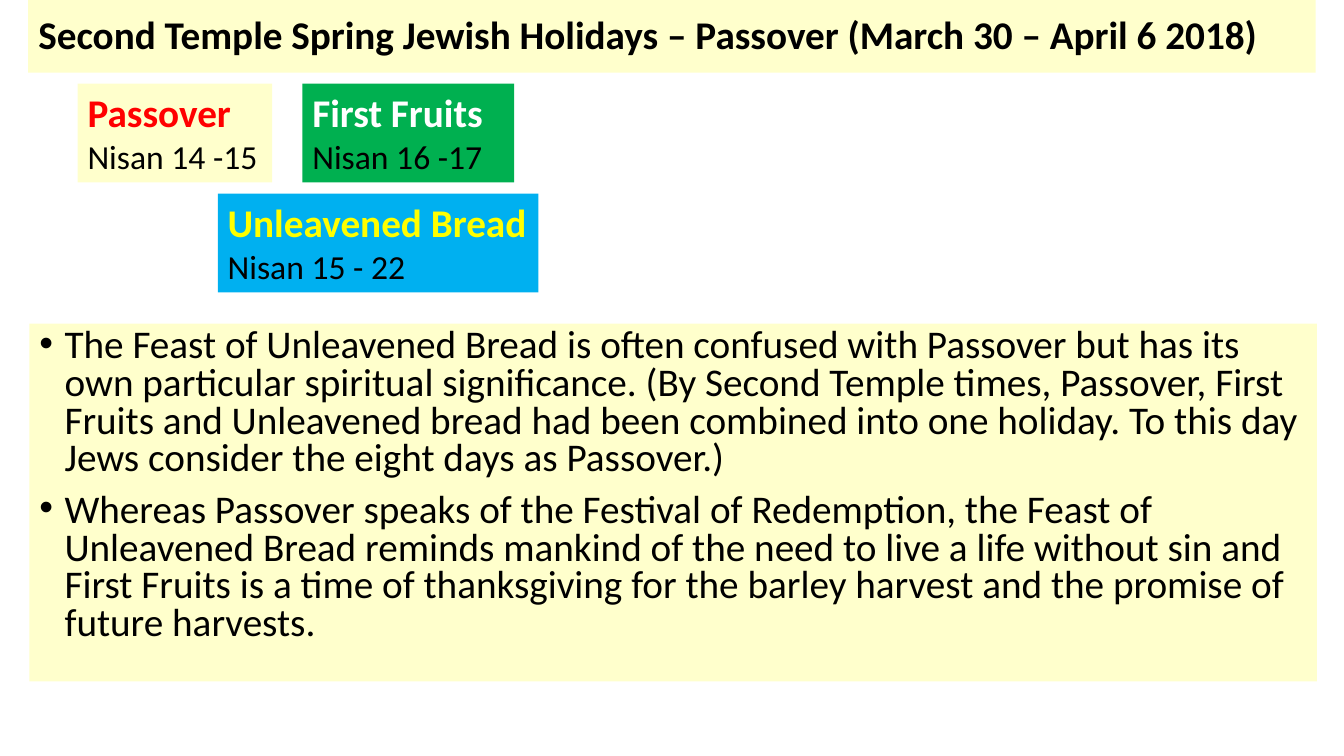
from pptx import Presentation
from pptx.dml.color import RGBColor
from pptx.enum.text import MSO_ANCHOR, MSO_AUTO_SIZE, PP_ALIGN
from pptx.util import Pt

LEFT = PP_ALIGN.LEFT
TOP, MIDDLE = MSO_ANCHOR.TOP, MSO_ANCHOR.MIDDLE
FIXED, GROW = MSO_AUTO_SIZE.NONE, MSO_AUTO_SIZE.SHAPE_TO_FIT_TEXT

PX = 9144
THEME = {
    "font": "Calibri",
    "heading": 28,
    "date": 24,
    "black": "000000",
    "white": "FFFFFF",
    "cream": "FFFFCC",
    "red": "FF0000",
    "green": "00B050",
    "blue": "00B0F0",
    "yellow": "FFFF00",
}


def set_panel(panel, bounds, fill, anchor, fit):
    for side, length in zip(("left", "top", "width", "height"), bounds):
        setattr(panel, side, length * PX)
    panel.fill.solid()
    panel.fill.fore_color.rgb = RGBColor.from_string(THEME[fill])
    frame_format = {"word_wrap": True, "auto_size": fit, "vertical_anchor": anchor}
    for key, value in frame_format.items():
        setattr(panel.text_frame, key, value)
    return panel.text_frame


def write(paragraph, text, size, color, bold, **paragraph_format):
    for key, value in {"alignment": LEFT, **paragraph_format}.items():
        setattr(paragraph, key, value)
    run = paragraph.add_run()
    run.text = text
    font_format = {"name": THEME["font"], "size": Pt(THEME[size]), "bold": bold}
    for key, value in font_format.items():
        setattr(run.font, key, value)
    run.font.color.rgb = RGBColor.from_string(THEME[color])


deck = Presentation()
deck.slide_width, deck.slide_height = 1333 * PX, 750 * PX
slide = deck.slides.add_slide(deck.slide_layouts[1])

headline = set_panel(slide.shapes.title, (28, 0, 1277, 72), "cream", MIDDLE, FIXED)
write(
    headline.paragraphs[0],
    "Second Temple Spring Jewish Holidays – Passover (March 30 – April 6 2018)",
    "heading", "black", True, line_spacing=0.9,
)

holidays = [
    ("Passover", "Nisan 14 -15", (77, 83, 193, 98), "cream", "red"),
    ("First Fruits", "Nisan 16 -17", (300, 83, 210, 98), "green", "white"),
    ("Unleavened Bread", "Nisan 15 - 22", (216, 192, 318, 98), "blue", "yellow"),
]
for holiday, dates, bounds, fill, color in holidays:
    card = set_panel(slide.shapes.add_textbox(0, 0, 0, 0), bounds, fill, TOP, GROW)
    write(card.paragraphs[0], holiday, "heading", color, True)
    write(card.add_paragraph(), dates, "date", "black", False)

explanations = [
    "The Feast of Unleavened Bread is often confused with Passover but has its own "
    "particular spiritual significance. (By Second Temple times, Passover, First Fruits "
    "and Unleavened bread had been combined into one holiday. To this day Jews consider "
    "the eight days as Passover.)",
    "Whereas Passover speaks of the Festival of Redemption, the Feast of Unleavened "
    "Bread reminds mankind of the need to live a life without sin and First Fruits is a "
    "time of thanksgiving for the barley harvest and the promise of future harvests.",
]
body = set_panel(slide.placeholders[1], (29, 321, 1277, 355), "cream", TOP, FIXED)
for index, explanation in enumerate(explanations):
    paragraph = body.add_paragraph() if index else body.paragraphs[0]
    write(
        paragraph, explanation, "heading", "black", False,
        line_spacing=0.8, space_before=Pt(10),
    )
    properties = paragraph._p.get_or_add_pPr()
    for key, value in {"marL": 25 * PX, "indent": -25 * PX}.items():
        properties.set(key, str(value))

deck.save("out.pptx")
